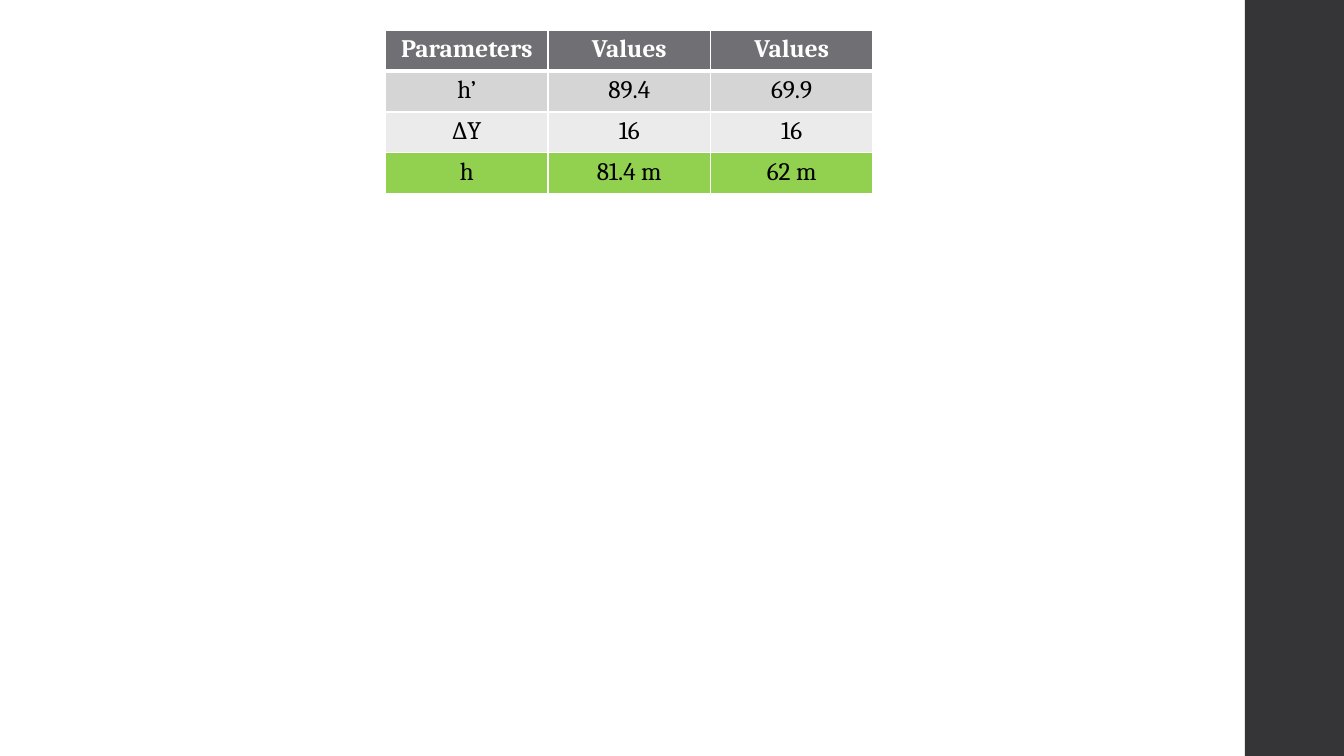
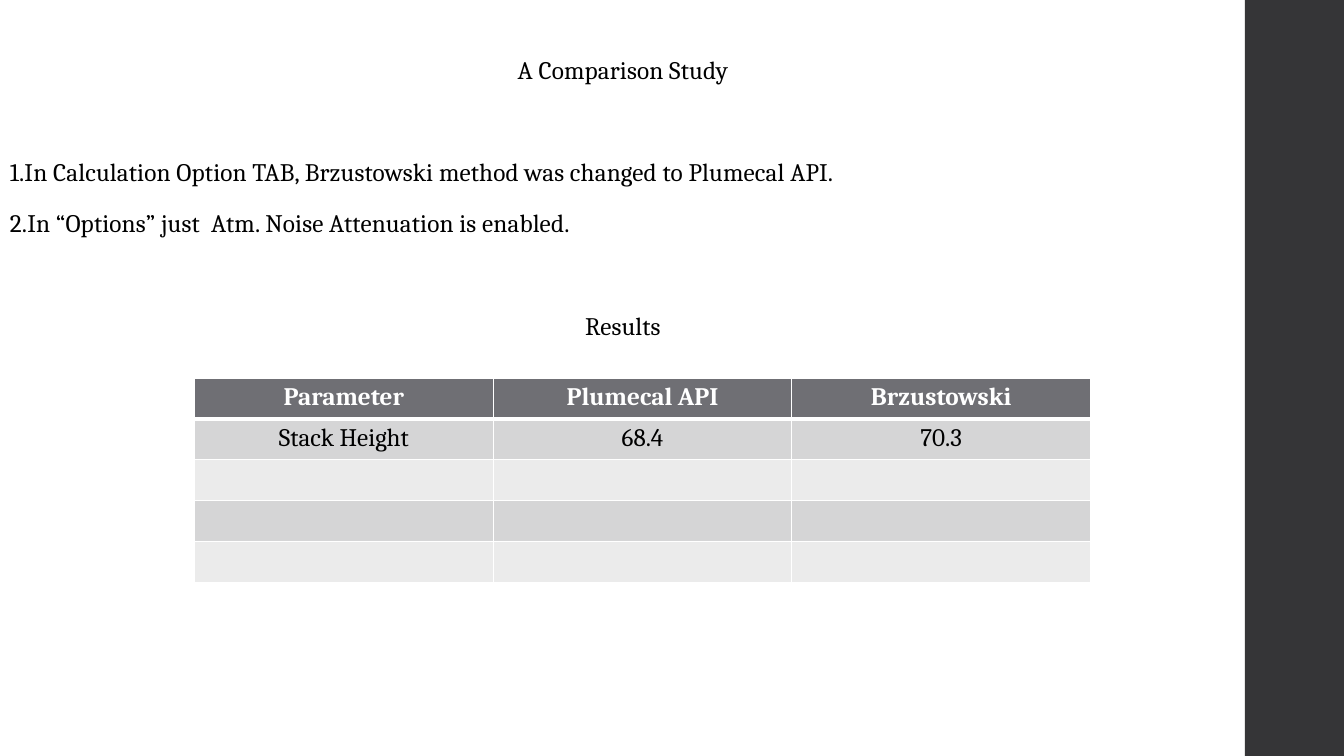
from dataclasses import dataclass

from lxml import etree
from pptx import Presentation
from pptx.dml.color import RGBColor
from pptx.enum.shapes import MSO_SHAPE
from pptx.enum.text import PP_ALIGN
from pptx.oxml.ns import qn
from pptx.util import Pt

RECTANGLE = MSO_SHAPE.RECTANGLE
LEFT, CENTER = PP_ALIGN.LEFT, PP_ALIGN.CENTER


@dataclass(frozen=True)
class Theme:
    """Colours, type and measures shared by the slides."""

    white: str = "FFFFFF"
    black: str = "000000"
    sidebar: str = "353537"
    header: str = "6F6F74"
    bands: tuple = ("D5D5D6", "EBEBEB")
    highlight: str = "92D050"
    font: str = "Cambria"
    size: float = 18
    tracking: float = 0.1
    line_spacing: float = 0.95
    space_before: float = 14
    space_after: float = 2
    empty_line: float = 36.6
    row_height: float = 29.2
    thin: float = 1
    thick: float = 3


THEME = Theme()
PAGE_WIDTH, PAGE_HEIGHT = 960, 540
SIDEBAR_LEFT = 889.3

HEIGHT_ROWS = [
    ("Parameters", "Values", "Values"),
    ("h’", "89.4", "69.9"),
    ("∆Y", "16", "16"),
    ("h", "81.4 m", "62 m"),
]
COMPARISON_ROWS = [
    ("Parameter", "Plumecal API", "Brzustowski"),
    ("Stack Height", "68.4", "70.3"),
    *[("", "", "")] * 3,
]
STUDY_TEXT = [
    ("A Comparison Study", CENTER, False),
    ("1.In Calculation Option TAB, Brzustowski method was changed to Plumecal API.", LEFT, True),
    ("2.In “Options” just  Atm. Noise Attenuation is enabled.", LEFT, False),
    ("Results", CENTER, True),
]


def style_font(font, color, bold=False):
    """Apply the shared typeface and size."""
    font.name, font.size, font.bold = THEME.font, Pt(THEME.size), bold
    font.color.rgb = RGBColor.from_string(color)


def add_page(deck):
    """Add a white page with the dark band on its right edge."""
    page = deck.slides.add_slide(deck.slide_layouts[6])
    page.background.fill.solid()
    page.background.fill.fore_color.rgb = RGBColor.from_string(THEME.white)
    band = page.shapes.add_shape(
        RECTANGLE, Pt(SIDEBAR_LEFT), 0, Pt(PAGE_WIDTH - SIDEBAR_LEFT), Pt(PAGE_HEIGHT)
    )
    band.shadow.inherit = False
    band.fill.solid()
    band.fill.fore_color.rgb = RGBColor.from_string(THEME.sidebar)
    band.line.fill.background()
    return page


def set_borders(cell, top, bottom):
    """Draw white cell borders, with the given top and bottom widths."""
    properties = cell._tc.get_or_add_tcPr()
    widths = {"a:lnL": THEME.thin, "a:lnR": THEME.thin, "a:lnT": top, "a:lnB": bottom}
    for index, (tag, width) in enumerate(widths.items()):
        line = etree.Element(qn(tag), w=str(Pt(width)))
        fill = etree.SubElement(line, qn("a:solidFill"))
        etree.SubElement(fill, qn("a:srgbClr"), val=THEME.white)
        properties.insert(index, line)


def add_value_table(page, left, top, width, rows, highlighted=None):
    """Add a banded table with a dark header and an optional highlighted row."""
    count = len(rows[0])
    table = page.shapes.add_table(
        len(rows), count, Pt(left), Pt(top), Pt(width), Pt(THEME.row_height * len(rows))
    ).table
    table.first_row = table.horz_banding = False
    for column in table.columns:
        column.width = Pt(width / count)
    for number, values in enumerate(rows):
        table.rows[number].height = Pt(THEME.row_height)
        is_header = number == 0
        color = THEME.header if is_header else THEME.bands[(number - 1) % 2]
        if number == highlighted:
            color = THEME.highlight
        for position, value in enumerate(values):
            cell = table.cell(number, position)
            cell.fill.solid()
            cell.fill.fore_color.rgb = RGBColor.from_string(color)
            set_borders(
                cell,
                top=THEME.thick if number == 1 else THEME.thin,
                bottom=THEME.thick if is_header else THEME.thin,
            )
            para = cell.text_frame.paragraphs[0]
            para.alignment = CENTER
            para.text = value
            style_font(para.font, THEME.white if is_header else THEME.black, is_header)


def add_study_text(page, left, top, width, height):
    """Add the study heading, its numbered steps and the results heading."""
    frame = page.shapes.add_textbox(Pt(left), Pt(top), Pt(width), Pt(height)).text_frame
    frame.word_wrap = True
    for index, (text, alignment, has_gap) in enumerate(STUDY_TEXT):
        para = frame.add_paragraph() if index else frame.paragraphs[0]
        para.alignment = alignment
        para.line_spacing = THEME.line_spacing
        para.space_after = Pt(THEME.space_after)
        if index:
            para.space_before = Pt(THEME.space_before + has_gap * THEME.empty_line)
        span = para.add_run()
        span.text = text
        span._r.get_or_add_rPr().set("spc", str(round(THEME.tracking * 100)))
        style_font(para.font, THEME.black)


def build_height_page(deck):
    """Build the page of stack height values."""
    page = add_page(deck)
    add_value_table(page, 275.5, 21.6, 348, HEIGHT_ROWS, highlighted=3)


def build_comparison_page(deck):
    """Build the page comparing the two methods."""
    page = add_page(deck)
    add_study_text(page, 0, 36.6, 890, 220)
    add_value_table(page, 139, 270, 640, COMPARISON_ROWS)


def main():
    """Build and save the deck."""
    deck = Presentation()
    deck.slide_width, deck.slide_height = Pt(PAGE_WIDTH), Pt(PAGE_HEIGHT)
    build_height_page(deck)
    build_comparison_page(deck)
    deck.save("out.pptx")


if __name__ == "__main__":
    main()
